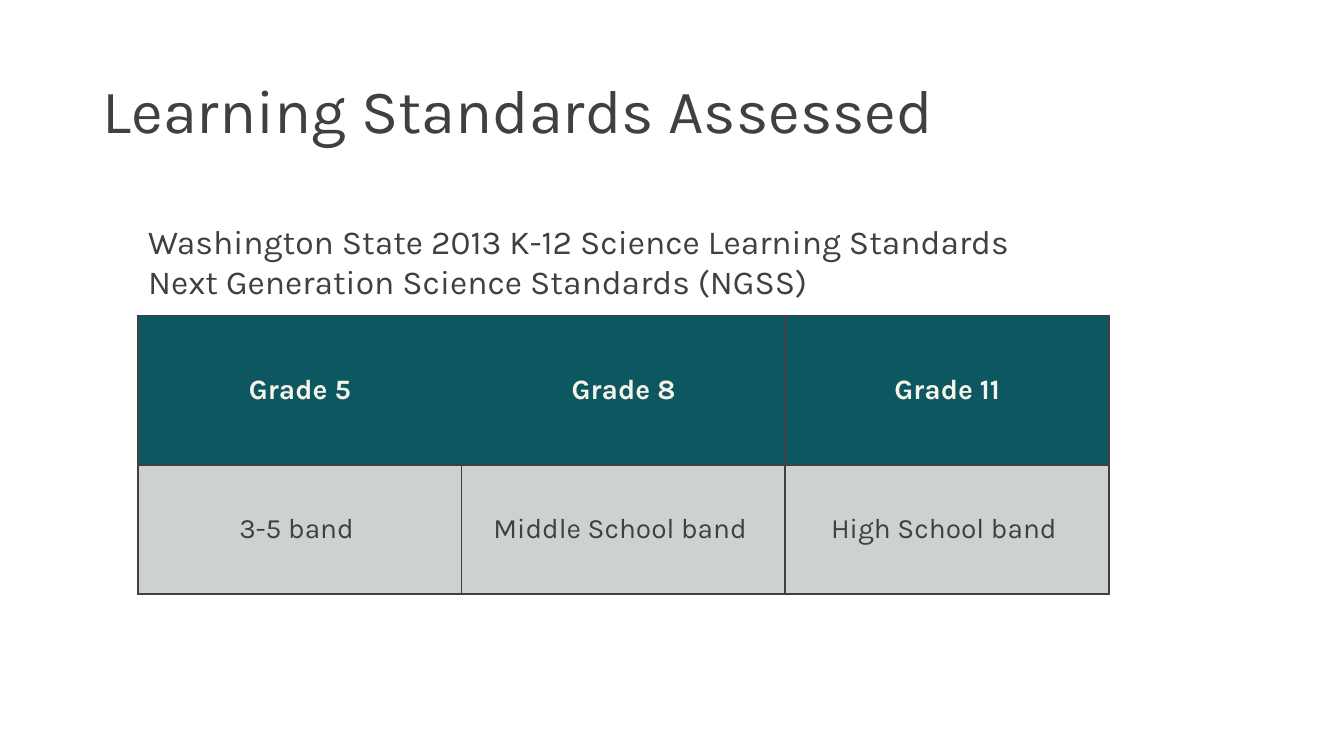
from lxml import etree
from pptx import Presentation
from pptx.dml.color import RGBColor
from pptx.enum.text import MSO_ANCHOR, PP_ALIGN
from pptx.oxml.ns import qn
from pptx.util import Inches, Pt

MIDDLE, TOP = MSO_ANCHOR.MIDDLE, MSO_ANCHOR.TOP
CENTER = PP_ALIGN.CENTER
FONT = "Karla"
INK, CREAM, TEAL, GREY = "40403D", "F7F5EB", "0D5761", "CCD1D2"
BORDER_WIDTH = 1.5
GRADE_BANDS = [
    ["Grade 5", "Grade 8", "Grade 11"],
    ["3-5 band ", "Middle School band ", "High School band "],
]
ROW_HEIGHTS = [1.48, 1.28]
COLUMN_WIDTH = 3.21


def color(value):
    return RGBColor.from_string(value)


def style(para, size, ink, bold=False):
    font = para.font
    font.name, font.size, font.bold = FONT, Pt(size), bold
    font.color.rgb = color(ink)


def add_text(page, lines, left, top, width, height, size, anchor=TOP, spacing=1.0):
    box = page.shapes.add_textbox(*map(Inches, (left, top, width, height)))
    frame = box.text_frame
    frame.word_wrap = True
    frame.vertical_anchor = anchor
    frame.text = "\n".join(lines)
    for para in frame.paragraphs:
        para.line_spacing = spacing
        style(para, size, INK)


def set_borders(cell, widths):
    """Draw the left, right, top and bottom borders; a width of 0 hides one."""
    properties = cell._tc.get_or_add_tcPr()
    for index, (side, width) in enumerate(zip("LRTB", widths)):
        line = etree.Element(qn(f"a:ln{side}"), w=str(Pt(width)))
        if width:
            fill = etree.SubElement(line, qn("a:solidFill"))
            etree.SubElement(fill, qn("a:srgbClr"), val=INK)
        else:
            etree.SubElement(line, qn("a:noFill"))
        properties.insert(index, line)


def add_band_table(page, left, top):
    columns = len(GRADE_BANDS[0])
    table = page.shapes.add_table(
        len(GRADE_BANDS), columns, Inches(left), Inches(top),
        Inches(COLUMN_WIDTH * columns), Inches(sum(ROW_HEIGHTS))).table
    for column in table.columns:
        column.width = Inches(COLUMN_WIDTH)
    for r, (texts, height) in enumerate(zip(GRADE_BANDS, ROW_HEIGHTS)):
        table.rows[r].height = Inches(height)
        header = r == 0
        first_divider = 0 if header else 1
        verticals = [BORDER_WIDTH, first_divider, BORDER_WIDTH, BORDER_WIDTH]
        for c, text in enumerate(texts):
            cell = table.cell(r, c)
            cell.text = text
            cell.vertical_anchor = MIDDLE
            cell.fill.solid()
            cell.fill.fore_color.rgb = color(TEAL if header else GREY)
            para = cell.text_frame.paragraphs[0]
            para.alignment = CENTER
            style(para, 20, CREAM if header else INK, bold=header)
            set_borders(cell, verticals[c:c + 2] + [BORDER_WIDTH] * 2)


def main():
    deck = Presentation()
    deck.slide_width, deck.slide_height = Inches(13.33), Inches(7.5)
    page = deck.slides.add_slide(deck.slide_layouts[6])
    add_text(page, ["Learning Standards Assessed"], 0.92, 0.4, 11.5, 1.45,
             size=44, anchor=MIDDLE, spacing=0.9)
    add_band_table(page, 1.37, 3.13)
    add_text(page, ["Washington State 2013 K-12 Science Learning Standards",
                    "Next Generation Science Standards (NGSS)"],
             1.37, 2.14, 9.63, 0.91, size=24)
    deck.save("out.pptx")


if __name__ == "__main__":
    main()
